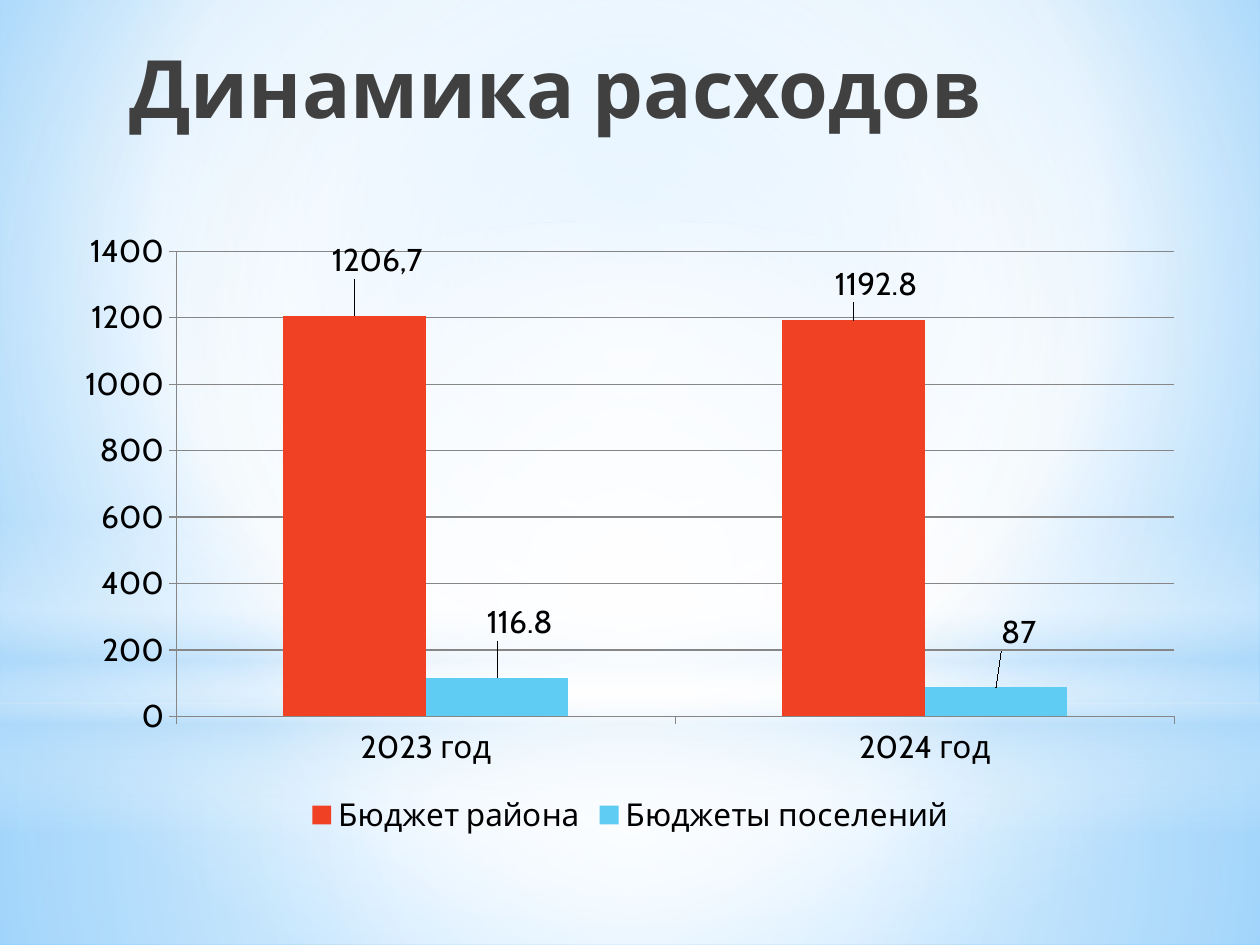
import dataclasses

import lxml.etree
import pptx
import pptx.chart.data
import pptx.dml.color
import pptx.enum.chart
import pptx.enum.shapes
import pptx.enum.text
import pptx.oxml.ns
import pptx.util
from pptx.util import Inches

qn = pptx.oxml.ns.qn


@dataclasses.dataclass(frozen=True)
class Theme:
    font: str = "Cabin"
    title_size: int = 46
    chart_size: int = 18
    title: str = "404040"
    text: str = "000000"
    grid: str = "868686"
    white: str = "FFFFFF"
    haze: str = "B4DCFA"
    sky: str = "9ED5FF"
    deep_sky: str = "5BB9FF"
    district: str = "F14124"
    settlements: str = "5ECCF3"


THEME = Theme()
CENTRE = (50, 50, 50, 50)
YEARS = ["2023 год", "2024 год"]
BUDGETS = [
    ("Бюджет района", (1206.7, 1192.8), THEME.district),
    ("Бюджеты поселений", (116.8, 87), THEME.settlements),
]
# Label shifts from the bar end, as shares of the chart's width and height
LABEL_SHIFTS = [(0.02, -0.05), (0.02, -0.02), (0.02, -0.05), (0.02, -0.05)]


def rgb(colour):
    return pptx.dml.color.RGBColor.from_string(colour)


def set_gradient(fill, owner, stops, focus=None):
    """Fill with (percent, colour, opacity) stops: circular around focus, else downwards."""
    fill.gradient()
    gradient = next(owner.iter(qn("a:gradFill")))
    gradient.clear()
    gradient.set("rotWithShape", "1")
    stop_list = lxml.etree.SubElement(gradient, qn("a:gsLst"))
    for percent, colour, opacity in stops:
        stop = lxml.etree.SubElement(stop_list, qn("a:gs"), pos=str(percent * 1000))
        tint = lxml.etree.SubElement(stop, qn("a:srgbClr"), val=colour)
        if opacity < 100:
            lxml.etree.SubElement(tint, qn("a:alpha"), val=str(opacity * 1000))
    if focus:
        path = lxml.etree.SubElement(gradient, qn("a:path"), path="circle")
        sides = {side: str(share * 1000) for side, share in zip("ltrb", focus)}
        lxml.etree.SubElement(path, qn("a:fillToRect"), **sides)
    else:
        lxml.etree.SubElement(gradient, qn("a:lin"), ang="5400000", scaled="0")


def add_glow(slide, preset, top, height, stops, focus=None):
    glow = slide.shapes.add_shape(preset, 0, Inches(top), Inches(10), Inches(height))
    glow.shadow.inherit = False
    glow.line.fill.background()
    set_gradient(glow.fill, glow.element, stops, focus)


def add_backdrop(slide):
    white, haze = THEME.white, THEME.haze
    shapes = pptx.enum.shapes.MSO_SHAPE
    sky = [(0, THEME.sky, 100), (60, white, 100), (100, THEME.deep_sky, 100)]
    set_gradient(slide.background.fill, slide.element, sky, (20, 10, 20, 60))
    add_glow(slide, shapes.RECTANGLE, 5.58, 1.92,
             [(0, white, 91), (37, white, 76), (100, haze, 79)], CENTRE)
    add_glow(slide, shapes.RECTANGLE, 0, 5.58,
             [(0, white, 89), (48, white, 62), (100, haze, 79)], CENTRE)
    add_glow(slide, shapes.RECTANGLE, 4.12, 2.5,
             [(0, white, 0), (29, white, 30), (45, haze, 40),
              (55, white, 26), (65, haze, 60), (100, white, 0)])
    add_glow(slide, shapes.OVAL, 1.75, 5.58,
             [(0, white, 100), (56, white, 0)], CENTRE)


def set_title(slide, wording):
    title = slide.shapes.title
    title.element.getparent().append(title.element)  # in front of the backdrop
    title.left, title.top = Inches(0.5), Inches(0.3)
    title.width, title.height = Inches(9), Inches(1.25)
    frame = title.text_frame
    frame.text = wording
    frame.auto_size = pptx.enum.text.MSO_AUTO_SIZE.NONE
    frame.vertical_anchor = pptx.enum.text.MSO_ANCHOR.TOP
    frame.margin_top = 0
    frame.margin_right = Inches(1.28)
    paragraph = frame.paragraphs[0]
    paragraph.alignment = pptx.enum.text.PP_ALIGN.CENTER
    style_font(paragraph.runs[0].font, THEME.title_size, THEME.title, bold=True)


def style_font(font, size, colour, bold=False):
    font.name = THEME.font
    font.size = pptx.util.Pt(size)
    font.bold = bold
    font.color.rgb = rgb(colour)


def add_layout(parent, index, **values):
    layout = lxml.etree.Element(qn("c:layout"))
    manual = lxml.etree.SubElement(layout, qn("c:manualLayout"))
    for name, value in values.items():
        lxml.etree.SubElement(manual, qn(f"c:{name}"), val=str(value))
    parent.insert(index, layout)


def place_plot(chart):
    plot_area = next(chart.element.iter(qn("c:plotArea")))
    for layout in plot_area.findall(qn("c:layout")):
        plot_area.remove(layout)
    add_layout(plot_area, 0, layoutTarget="inner", xMode="edge", yMode="edge",
               x=0.1, y=0.05, w=0.88, h=0.75)


def style_axes(chart):
    for axis in (chart.category_axis, chart.value_axis):
        axis.major_tick_mark = pptx.enum.chart.XL_TICK_MARK.OUTSIDE
        axis.format.line.color.rgb = rgb(THEME.grid)
    values = chart.value_axis
    values.minimum_scale, values.maximum_scale, values.major_unit = 0, 1400, 200
    values.has_major_gridlines = True
    values.major_gridlines.format.line.color.rgb = rgb(THEME.grid)


def label_bars(chart):
    for series in chart.plots[0].series:
        series.data_labels.show_value = True
        for index in range(len(YEARS)):
            label = series.points[index].data_label
            label.position = pptx.enum.chart.XL_LABEL_POSITION.OUTSIDE_END
    comma_label = chart.plots[0].series[0].points[0].data_label.text_frame
    comma_label.text = "1206,7"
    style_font(comma_label.paragraphs[0].runs[0].font, THEME.chart_size, THEME.text)
    for label, (x, y) in zip(chart.element.iter(qn("c:dLbl")), LABEL_SHIFTS):
        add_layout(label, 1, x=x, y=y)


def add_budget_chart(slide):
    data = pptx.chart.data.CategoryChartData()
    data.categories = YEARS
    for name, values, _ in BUDGETS:
        data.add_series(name, values)
    chart = slide.shapes.add_chart(
        pptx.enum.chart.XL_CHART_TYPE.COLUMN_CLUSTERED,
        Inches(0.5), Inches(1.75), Inches(9), Inches(4.92), data).chart
    chart.has_title = False
    style_font(chart.font, THEME.chart_size, THEME.text)
    chart.has_legend = True
    chart.legend.position = pptx.enum.chart.XL_LEGEND_POSITION.BOTTOM
    chart.legend.include_in_layout = False
    plot = chart.plots[0]
    plot.vary_by_categories = False
    plot.gap_width, plot.overlap = 150, 0
    for series, (_, _, colour) in zip(plot.series, BUDGETS):
        series.format.fill.solid()
        series.format.fill.fore_color.rgb = rgb(colour)
    style_axes(chart)
    label_bars(chart)
    place_plot(chart)


def main():
    deck = pptx.Presentation()
    deck.slide_width, deck.slide_height = Inches(10), Inches(7.5)
    slide = deck.slides.add_slide(deck.slide_layouts.get_by_name("Title Only"))
    add_backdrop(slide)
    set_title(slide, "Динамика расходов")
    add_budget_chart(slide)
    deck.save("out.pptx")


if __name__ == "__main__":
    main()
